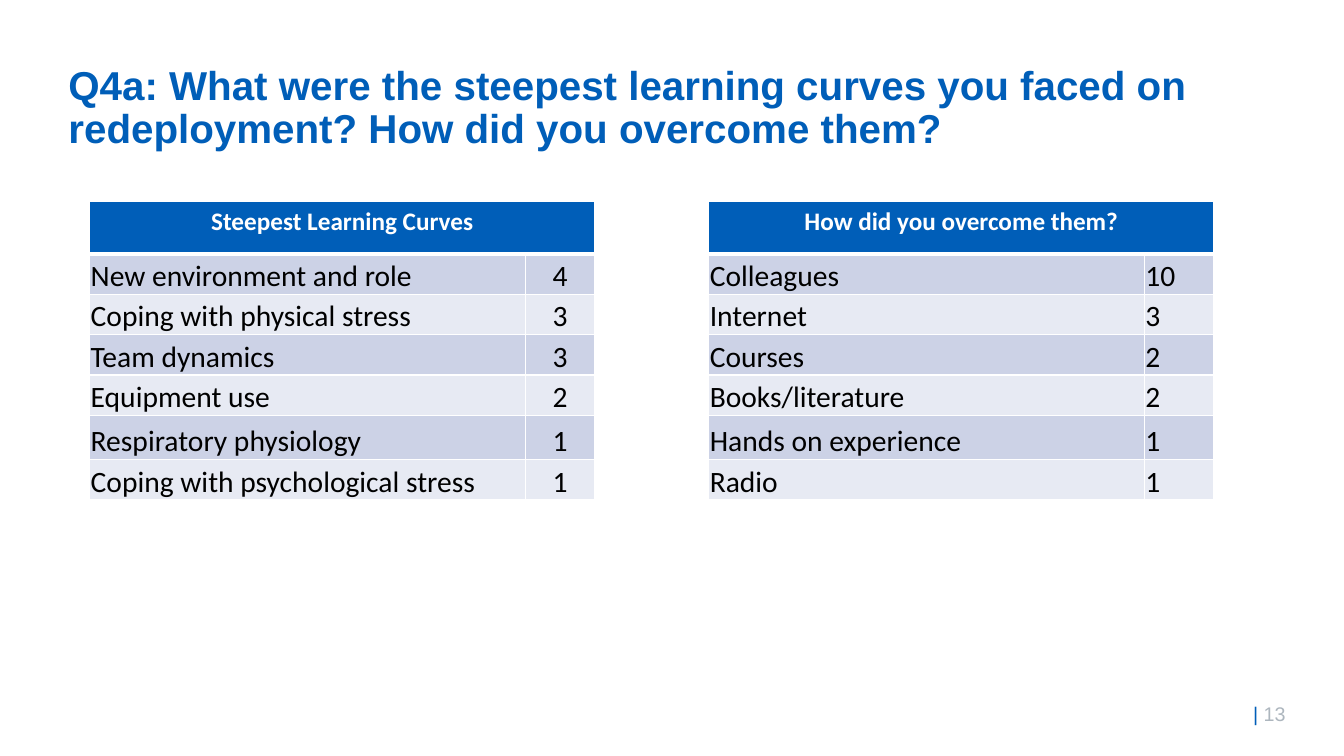
from lxml.etree import SubElement
from pptx import Presentation
from pptx.dml.color import RGBColor
from pptx.enum.text import MSO_ANCHOR, PP_ALIGN
from pptx.oxml.ns import qn
from pptx.util import Inches, Pt

BLUE = RGBColor(0x00, 0x5E, 0xB8)
GREY = RGBColor(0xAD, 0xB6, 0xBE)
WHITE = RGBColor(0xFF, 0xFF, 0xFF)
BLACK = RGBColor(0x00, 0x00, 0x00)
BANDS = (RGBColor(0xCC, 0xD2, 0xE6), RGBColor(0xE7, 0xEA, 0xF3))

# Text formats
TITLE = {"name": "Arial", "size": Pt(28.8), "bold": True, "color": BLUE}
PAGE_MARK = {"name": "Arial", "size": Pt(14.1), "color": BLUE}
PAGE_NUMBER = {**PAGE_MARK, "color": GREY}
HEADER = {"name": "Calibri", "size": Pt(18), "bold": True, "color": WHITE}
BODY = {"name": "Calibri", "size": Pt(21.1), "bold": False, "color": BLACK}
BODY_MARGINS = {"margin_left": 0.01, "margin_right": 0.01,
                "margin_top": 0.01, "margin_bottom": 0}

# Table grid, in inches
TABLE_TOP = 2
TABLE_LEFTS = (0.89, 7.03)
COLUMN_WIDTHS = (4.32, 0.69)
ROW_HEIGHTS = (0.52, 0.4, 0.4, 0.4, 0.4, 0.44, 0.4)

LEARNING_CURVES = (
    ("New environment and role", 4),
    ("Coping with physical stress", 3),
    ("Team dynamics", 3),
    ("Equipment use", 2),
    ("Respiratory physiology", 1),
    ("Coping with psychological stress", 1),
)
SOLUTIONS = (
    ("Colleagues", 10),
    ("Internet", 3),
    ("Courses", 2),
    ("Books/literature", 2),
    ("Hands on experience", 1),
    ("Radio", 1),
)


def add_run(paragraph, text, text_format):
    run = paragraph.add_run()
    run.text = text
    for name, value in text_format.items():
        if name == "color":
            run.font.color.rgb = value
        else:
            setattr(run.font, name, value)


def add_text(slide, box, runs, line_spacing=1.0):
    shape = slide.shapes.add_textbox(*(Inches(length) for length in box))
    shape.text_frame.word_wrap = True
    paragraph = shape.text_frame.paragraphs[0]
    paragraph.line_spacing = line_spacing
    for text, text_format in runs:
        add_run(paragraph, text, text_format)


def style_cell(cell, fill_color, bottom_width=1):
    """Draw white borders, then fill the cell."""
    properties = cell._tc.get_or_add_tcPr()
    for side, width in (("L", 1), ("R", 1), ("T", 1), ("B", bottom_width)):
        line = SubElement(properties, qn(f"a:ln{side}"), w=str(Pt(width)))
        fill = SubElement(line, qn("a:solidFill"))
        SubElement(fill, qn("a:srgbClr"), val=str(WHITE))
    cell.fill.solid()
    cell.fill.fore_color.rgb = fill_color


def add_count_table(slide, left, top, header, rows, count_alignment):
    table = slide.shapes.add_table(
        len(ROW_HEIGHTS), len(COLUMN_WIDTHS), Inches(left), Inches(top),
        Inches(sum(COLUMN_WIDTHS)), Inches(sum(ROW_HEIGHTS))).table
    for column, width in zip(table.columns, COLUMN_WIDTHS):
        column.width = Inches(width)
    for row, height in zip(table.rows, ROW_HEIGHTS):
        row.height = Inches(height)

    # Header across both columns
    header_cell = table.cell(0, 0)
    header_cell.merge(table.cell(0, 1))
    for cell in table.rows[0].cells:
        style_cell(cell, BLUE, bottom_width=3)
    paragraph = header_cell.text_frame.paragraphs[0]
    paragraph.alignment = PP_ALIGN.CENTER
    add_run(paragraph, header, HEADER)

    # Banded answers with their counts
    alignments = (PP_ALIGN.LEFT, count_alignment)
    for row_index, values in enumerate(rows, start=1):
        for column_index, value in enumerate(values):
            cell = table.cell(row_index, column_index)
            style_cell(cell, BANDS[(row_index - 1) % 2])
            cell.vertical_anchor = MSO_ANCHOR.BOTTOM
            for name, margin in BODY_MARGINS.items():
                setattr(cell, name, Inches(margin))
            paragraph = cell.text_frame.paragraphs[0]
            paragraph.alignment = alignments[column_index]
            add_run(paragraph, str(value), BODY)


def build_survey_slide(presentation):
    slide = presentation.slides.add_slide(presentation.slide_layouts[6])
    # Page number
    add_text(slide, (12.33, 6.91, 0.94, 0.34),
             [("| ", PAGE_MARK), ("13", PAGE_NUMBER)])
    # Title
    add_text(slide, (0.58, 0.6, 12.18, 0.67),
             [("Q4a: What were the steepest learning curves you faced on "
               "redeployment? How did you overcome them?", TITLE)],
             line_spacing=0.9)
    # Tables side by side
    add_count_table(slide, TABLE_LEFTS[0], TABLE_TOP, "Steepest Learning Curves",
                    LEARNING_CURVES, PP_ALIGN.CENTER)
    add_count_table(slide, TABLE_LEFTS[1], TABLE_TOP, "How did you overcome them?",
                    SOLUTIONS, PP_ALIGN.LEFT)


def main():
    presentation = Presentation()
    presentation.slide_width = Inches(13.33)
    presentation.slide_height = Inches(7.5)
    build_survey_slide(presentation)
    presentation.save("out.pptx")


if __name__ == "__main__":
    main()
